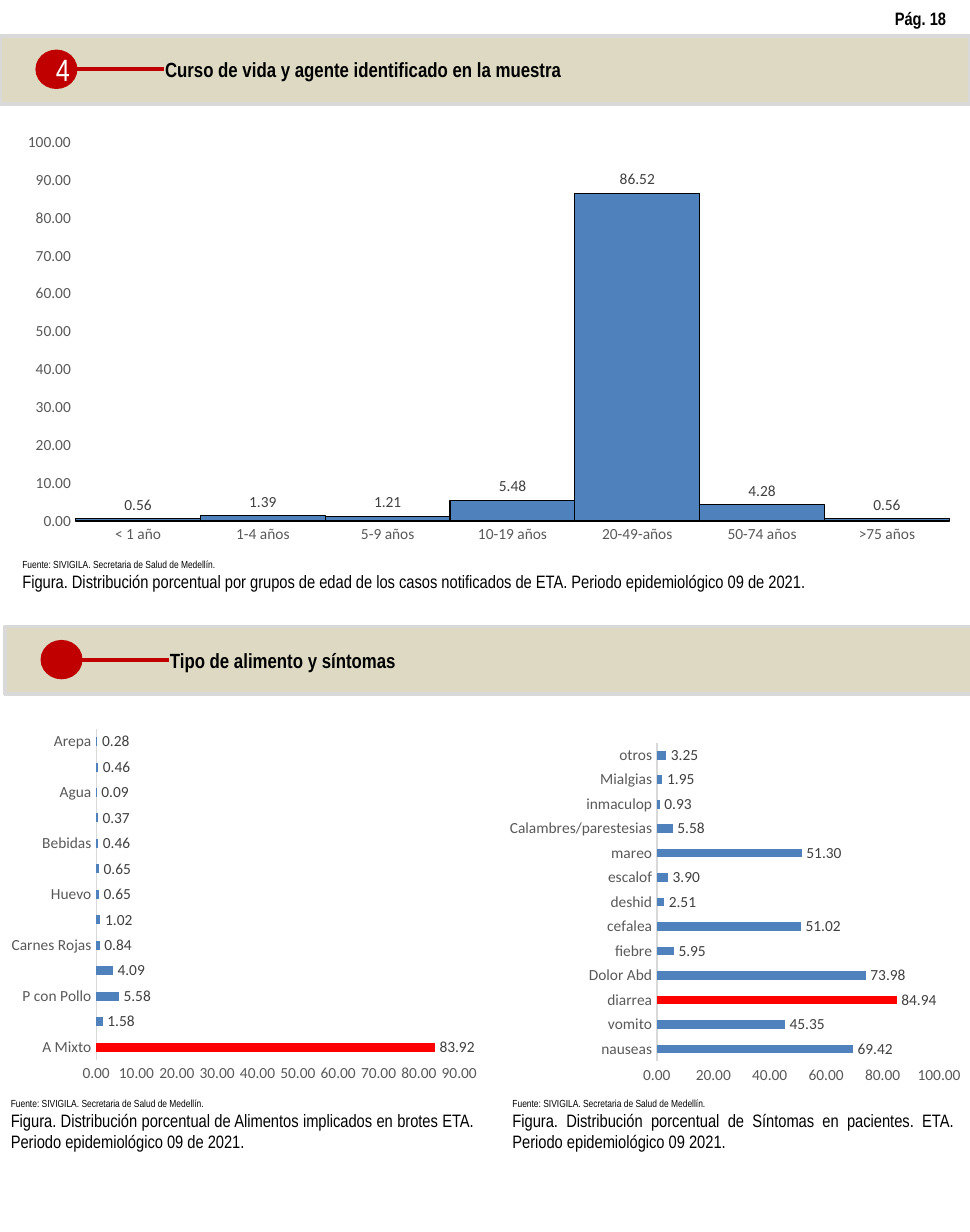
import pptx
import pptx.chart.data
import pptx.dml.color
import pptx.enum.chart
import pptx.enum.shapes
import pptx.enum.text
import pptx.oxml
import pptx.oxml.ns
import pptx.util
from dataclasses import dataclass

PX = 9525  # 96 px to the inch


@dataclass(frozen=True)
class Theme:
    text_font: str = "Arial Narrow"
    chart_font: str = "Calibri"
    black: str = "000000"
    white: str = "FFFFFF"
    band: str = "DDD9C3"
    rule: str = "D9D9D9"
    accent: str = "C00000"
    bar: str = "4F81BD"
    highlight: str = "FF0000"
    axis_text: str = "595959"
    label_text: str = "404040"
    heading: float = 12
    number: float = 18
    body: float = 10.5
    source: float = 6
    chart: float = 9


theme = Theme()
rgb = pptx.dml.color.RGBColor.from_string
align = pptx.enum.text.PP_ALIGN
shape_type = pptx.enum.shapes.MSO_SHAPE
chart_type = pptx.enum.chart.XL_CHART_TYPE


def style_font(font, name, size, color, bold=False):
    font.name = name
    font.size = pptx.util.Pt(size)
    font.color.rgb = rgb(color)
    font.bold = bold


def write_text(box, place, lines):
    """Place a box and fill it with (text, size, bold, alignment) lines."""
    box.left, box.top, box.width, box.height = [n * PX for n in place]
    frame = box.text_frame
    frame.word_wrap = True
    frame.auto_size = pptx.enum.text.MSO_AUTO_SIZE.SHAPE_TO_FIT_TEXT
    frame.vertical_anchor = pptx.enum.text.MSO_ANCHOR.TOP
    for index, (text, size, bold, alignment) in enumerate(lines):
        para = frame.add_paragraph() if index else frame.paragraphs[0]
        para.text = text
        para.alignment = alignment
        style_font(para.font, theme.text_font, size, theme.black, bold)


deck = pptx.Presentation()
deck.slide_width, deck.slide_height = 756 * PX, 960 * PX
page = deck.slides.add_slide(deck.slide_layouts[5])
shapes = page.shapes
title = shapes.title

# Section bands: bar, marker, rule and heading
sections = [
    (0, 0, "4", "Curso de vida y agente identificado en la muestra"),
    (4, 460, "", "Tipo de alimento y síntomas"),
]
for dx, dy, number, heading in sections:
    for kind, place, fill, line in [
        (shape_type.RECTANGLE, (dx, 28 + dy, 756, 53), theme.band, theme.rule),
        (shape_type.OVAL, (29 + dx, 40 + dy, 30, 28), theme.accent, theme.accent),
    ]:
        marker = shapes.add_shape(kind, *[n * PX for n in place])
        marker.shadow.inherit = False
        marker.fill.solid()
        marker.fill.fore_color.rgb = rgb(fill)
        marker.line.color.rgb = rgb(line)
        marker.line.width = pptx.util.Pt(2)
    if number:
        frame = marker.text_frame
        frame.margin_left, frame.margin_right = 10 * PX, 0
        frame.margin_top = frame.margin_bottom = 0
        frame.word_wrap = False
        frame.vertical_anchor = pptx.enum.text.MSO_ANCHOR.MIDDLE
        para = frame.paragraphs[0]
        para.text = number
        para.alignment = align.CENTER
        style_font(para.font, theme.text_font, theme.number, theme.white)

    rule = shapes.add_connector(
        pptx.enum.shapes.MSO_CONNECTOR.STRAIGHT,
        (60 + dx) * PX, (54 + dy) * PX, (128 + dx) * PX, (54 + dy) * PX)
    rule.line.color.rgb = rgb(theme.accent)
    rule.line.width = pptx.util.Pt(2.25)
    rule.element.spPr.append(pptx.oxml.parse_xml(
        f"<a:effectLst {pptx.oxml.ns.nsdecls('a')}/>"))

    if dy == 0:
        box = title
        rule.element.addnext(title.element)  # keep the title above its band
    else:
        box = shapes.add_textbox(0, 0, 0, 0)
    write_text(box, (119 + dx, 40 + dy, 441, 29),
               [(heading, theme.heading, True, align.LEFT)])

# Page number
write_text(shapes.add_textbox(0, 0, 0, 0), (688, 1, 68, 27),
           [("Pág. 18", theme.body, True, align.LEFT)])

# Source and caption under each chart
source = "Fuente: SIVIGILA. Secretaria de Salud de Medellín."
captions = [
    ((8, 430, 725, 36), "por grupos de edad de los casos notificados de ETA. Periodo epidemiológico 09 de 2021."),
    ((-1, 850, 380, 54), "de Alimentos implicados en brotes ETA. Periodo epidemiológico 09 de 2021."),
    ((390, 850, 363, 54), "de Síntomas en pacientes. ETA. Periodo epidemiológico 09 2021."),
]
for place, ending in captions:
    write_text(shapes.add_textbox(0, 0, 0, 0), place, [
        (source, theme.source, False, align.LEFT),
        (f"Figura. Distribución porcentual {ending}", theme.body, False, align.JUSTIFY),
    ])

# Chart data
ages = {"< 1 año": 0.56, "1-4 años": 1.39, "5-9 años": 1.21, "10-19 años": 5.48,
        "20-49-años": 86.52, "50-74 años": 4.28, ">75 años": 0.56}
foods = {"A Mixto": 83.92, "C Rápidas": 1.58, "P con Pollo": 5.58,
         "P de Mar o Rio": 4.09, "Carnes Rojas": 0.84, "D Lácteos": 1.02,
         "Huevo": 0.65, "Panadería y Repostería": 0.65, "Bebidas": 0.46,
         "Ensaldas y Frutas": 0.37, "Agua": 0.09,
         "Carne Procesada o Embutidos": 0.46, "Arepa": 0.28}
symptoms = {"nauseas": 69.42, "vomito": 45.35, "diarrea": 84.94, "Dolor Abd": 73.98,
            "fiebre": 5.95, "cefalea": 51.02, "deshid": 2.51, "escalof": 3.9,
            "mareo": 51.3, "Calambres/parestesias": 5.58, "inmaculop": 0.93,
            "Mialgias": 1.95, "otros": 3.25}

# Charts: kind, data, place, plot area, axis maximum, step, gap, highlighted bar
charts = [
    (chart_type.COLUMN_CLUSTERED, ages, (7, 98, 747, 332), (59, 111, 681, 295), 100, 10, 0, None),
    (chart_type.BAR_CLUSTERED, foods, (1, 563, 377, 287), (75, 568, 283, 258), 90, 10, 182, 0),
    (chart_type.BAR_CLUSTERED, symptoms, (390, 572, 366, 277), (512, 579, 220, 248), 100, 20, 182, 2),
]
for kind, values, place, plot_place, maximum, step, gap, highlighted in charts:
    data = pptx.chart.data.CategoryChartData(number_format="0.00")
    data.categories = list(values)
    data.add_series("Series 1", list(values.values()))
    chart = shapes.add_chart(kind, *[n * PX for n in place], data).chart
    chart.has_title = chart.has_legend = False
    style_font(chart.font, theme.chart_font, theme.chart, theme.black)

    # Axes
    for axis in (chart.category_axis, chart.value_axis):
        axis.has_major_gridlines = False
        axis.major_tick_mark = pptx.enum.chart.XL_TICK_MARK.NONE
        style_font(axis.tick_labels.font, theme.chart_font, theme.chart, theme.axis_text)
    chart.category_axis.format.line.color.rgb = rgb(theme.rule)
    chart.category_axis.format.line.width = pptx.util.Pt(0.75)
    axis = chart.value_axis
    axis.minimum_scale, axis.maximum_scale, axis.major_unit = 0, maximum, step
    axis.format.line.fill.background()
    axis.tick_labels.number_format = "0.00"
    axis.tick_labels.number_format_is_linked = False

    # Bars and value labels
    plot = chart.plots[0]
    plot.gap_width = gap
    plot.vary_by_categories = False
    series = plot.series[0]
    series.format.fill.solid()
    series.format.fill.fore_color.rgb = rgb(theme.bar)
    if highlighted is None:
        series.format.line.color.rgb = rgb(theme.black)
        series.format.line.width = pptx.util.Pt(0.75)
    else:
        fill = series.points[highlighted].format.fill
        fill.solid()
        fill.fore_color.rgb = rgb(theme.highlight)
    labels = series.data_labels
    labels.show_value = True
    labels.position = pptx.enum.chart.XL_LABEL_POSITION.OUTSIDE_END
    labels.number_format = "0.00"
    labels.number_format_is_linked = False
    style_font(labels.font, theme.chart_font, theme.chart, theme.label_text)

    # Plot area as fractions of the chart
    left, top, width, height = place
    x, y, w, h = plot_place
    fractions = {"x": (x - left) / width, "y": (y - top) / height, "w": w / width, "h": h / height}
    modes = "".join(f'<c:{side}Mode val="edge"/>' for side in "xy")
    sizes = "".join(f'<c:{side} val="{part:.4f}"/>' for side, part in fractions.items())
    area = chart.element.chart.plotArea
    for layout in area.findall(pptx.oxml.ns.qn("c:layout")):
        area.remove(layout)
    area.insert(0, pptx.oxml.parse_xml(
        f"<c:layout {pptx.oxml.ns.nsdecls('c')}><c:manualLayout>"
        f'<c:layoutTarget val="inner"/>{modes}{sizes}</c:manualLayout></c:layout>'))

deck.save("out.pptx")
